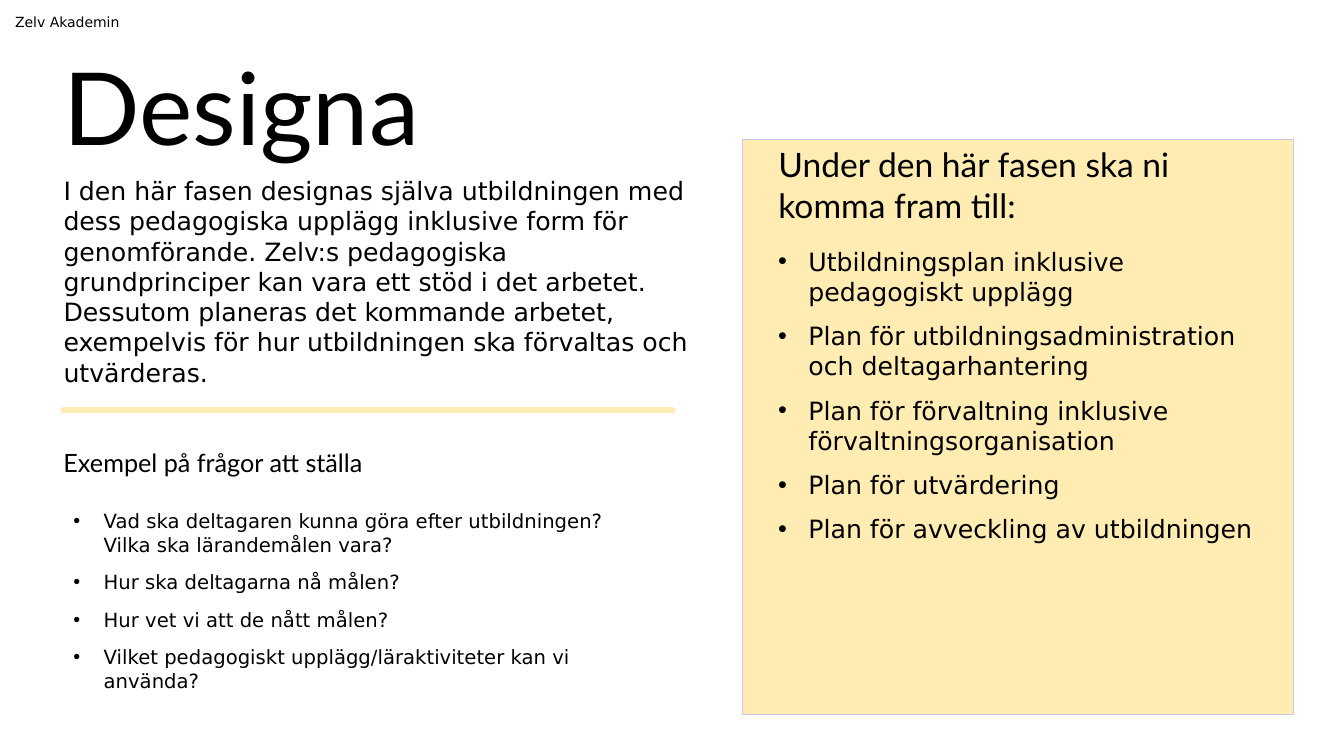
from lxml import etree
from pptx import Presentation
from pptx.dml.color import RGBColor
from pptx.enum.shapes import MSO_CONNECTOR, MSO_SHAPE
from pptx.enum.text import MSO_ANCHOR, MSO_AUTO_SIZE, PP_ALIGN
from pptx.oxml.ns import qn
from pptx.util import Inches, Pt

RECTANGLE = MSO_SHAPE.RECTANGLE
STRAIGHT = MSO_CONNECTOR.STRAIGHT
TOP = MSO_ANCHOR.TOP
LEFT = PP_ALIGN.LEFT
FIT_SHAPE = MSO_AUTO_SIZE.SHAPE_TO_FIT_TEXT
NO_FIT = MSO_AUTO_SIZE.NONE

COLORS = {"text": "000000", "yellow": "FFECB3", "lilac": "D1C4E9"}
HEADING, BODY = "Lato", "DejaVu Sans"
MARGIN = 0.63
INDENT = Inches(0.3)


def color(name):
    return RGBColor.from_string(COLORS[name])


def add_text(place, lines, font, size, bullets=False):
    box = page.shapes.add_textbox(*[Inches(length) for length in place])
    frame = box.text_frame
    settings = {"word_wrap": True, "vertical_anchor": TOP,
                "auto_size": NO_FIT if bullets else FIT_SHAPE}
    if not bullets:
        settings.update(margin_left=0, margin_top=0, margin_right=0, margin_bottom=0)
    for name, value in settings.items():
        setattr(frame, name, value)
    for index, line in enumerate(lines):
        para = frame.add_paragraph() if index else frame.paragraphs[0]
        para.alignment = LEFT
        span = para.add_run()
        span.text = line
        for name, value in {"name": font, "size": Pt(size)}.items():
            setattr(span.font, name, value)
        span.font.color.rgb = color("text")
        if bullets:
            para.space_before = Pt(10)
            properties = para._p.get_or_add_pPr()
            properties.set("marL", str(INDENT))
            properties.set("indent", str(-INDENT))
            etree.SubElement(properties, qn("a:buFont")).set("typeface", "Arial")
            etree.SubElement(properties, qn("a:buChar")).set("char", "•")


deck = Presentation()
deck.slide_width, deck.slide_height = Inches(13.33), Inches(7.5)
page = deck.slides.add_slide(deck.slide_layouts[6])

# Yellow panel for the results of the phase
panel = page.shapes.add_shape(RECTANGLE, Inches(7.36), Inches(1.38), Inches(5.47), Inches(5.71))
panel.shadow.inherit = False
panel.fill.solid()
panel.fill.fore_color.rgb = color("yellow")
panel.line.color.rgb = color("lilac")
panel.line.width = Pt(0.5)

# Headings and introduction
introduction = (
    "I den här fasen designas själva utbildningen med dess pedagogiska upplägg "
    "inklusive form för genomförande. Zelv:s pedagogiska grundprinciper kan vara "
    "ett stöd i det arbetet. Dessutom planeras det kommande arbetet, exempelvis "
    "för hur utbildningen ska förvaltas och utvärderas."
)
for place, text, font, size in [
    ((MARGIN, 0.44, 4.39, 1.21), "Designa", HEADING, 72),
    ((MARGIN, 1.74, 6.28, 2.12), introduction, BODY, 18),
    ((7.72, 1.43, 4.98, 0.81), "Under den här fasen ska ni komma fram till:", HEADING, 24),
    ((MARGIN, 4.44, 4.13, 0.3), "Exempel på frågor att ställa", HEADING, 18),
    ((0.15, 0.13, 2.98, 0.17), "Zelv Akademin", BODY, 10),
]:
    add_text(place, [text], font, size)

# Bullet lists
results = [
    "Utbildningsplan inklusive pedagogiskt upplägg",
    "Plan för utbildningsadministration och deltagarhantering",
    "Plan för förvaltning inklusive förvaltningsorganisation",
    "Plan för utvärdering",
    "Plan för avveckling av utbildningen",
]
questions = [
    "Vad ska deltagaren kunna göra efter utbildningen? Vilka ska lärandemålen vara?",
    "Hur ska deltagarna nå målen?",
    "Hur vet vi att de nått målen?",
    "Vilket pedagogiskt upplägg/läraktiviteter kan vi använda?",
]
add_text((7.62, 2.39, 4.96, 4.47), results, BODY, 18, bullets=True)
add_text((MARGIN, 5, 5.91, 2.7), questions, BODY, 14, bullets=True)

# Divider with round ends
divider = page.shapes.add_connector(
    STRAIGHT, Inches(MARGIN), Inches(4.07), Inches(6.67), Inches(4.07))
divider.line.color.rgb = color("yellow")
divider.line.width = Pt(4.5)
divider.line._get_or_add_ln().set("cap", "rnd")
etree.SubElement(divider._element.spPr, qn("a:effectLst"))

deck.save("out.pptx")
